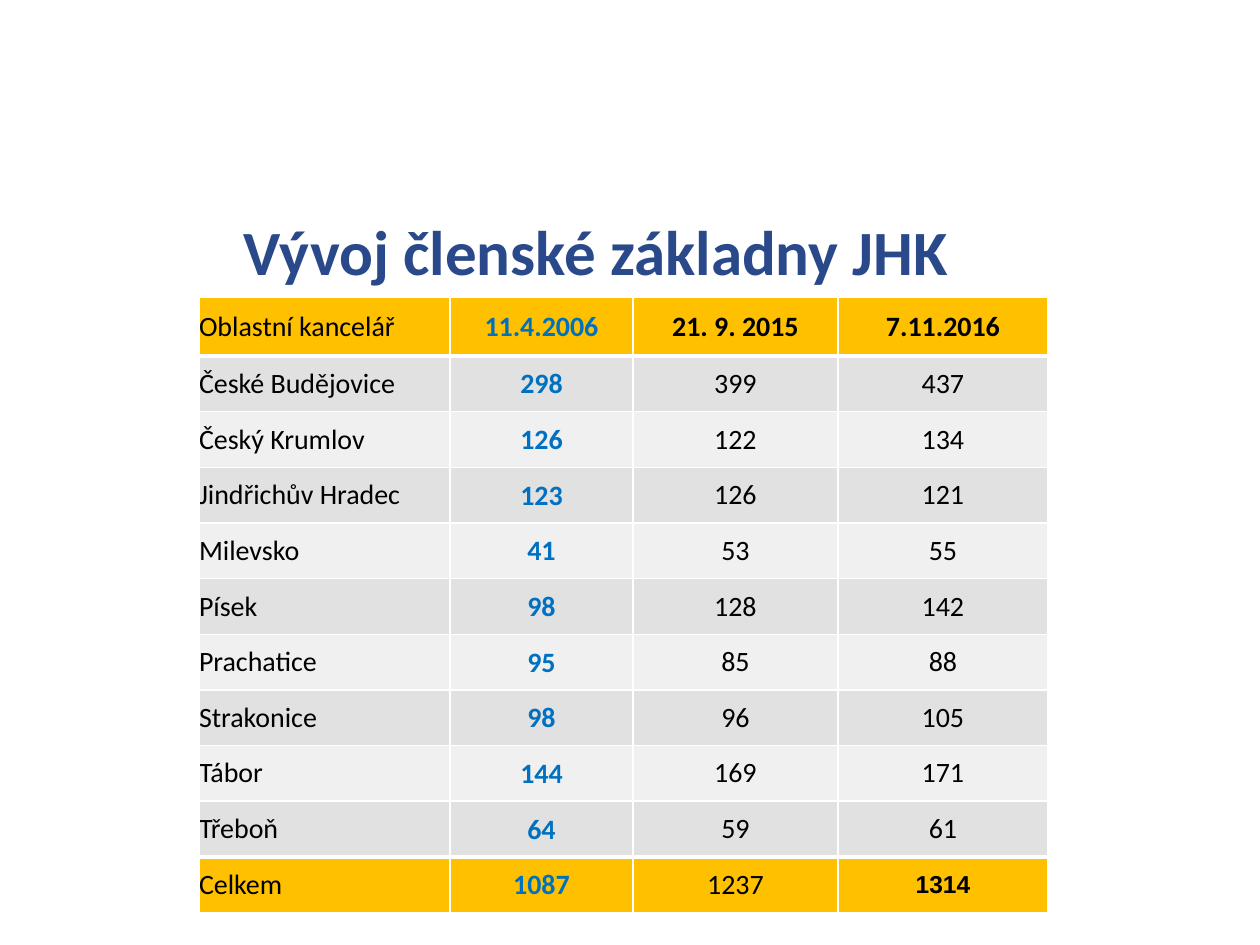
"""Build a slide with a table of chamber membership by regional office."""
from lxml import etree
from pptx import Presentation
from pptx import util as u
from pptx.dml.color import RGBColor
from pptx.enum import text
from pptx.oxml import ns

SCALE = 914400 / 126
NAVY = RGBColor(0x2A, 0x49, 0x8B)
BLUE = RGBColor(0x00, 0x70, 0xC0)
BLACK = RGBColor(0x00, 0x00, 0x00)
WHITE = RGBColor(0xFF, 0xFF, 0xFF)
GOLD = RGBColor(0xFF, 0xC0, 0x00)
BANDS = (RGBColor(0xF0, 0xF0, 0xF0), RGBColor(0xE1, 0xE1, 0xE1))

COLUMN_WIDTHS = (251, 183, 205, 210)
HEADER_HEIGHT, BODY_HEIGHT = 59, 557
MARGINS = ((0, 0, 0, 0), (1, 1, 1, 0), (9, 0, 9, 0), (9, 0, 9, 0))
MEMBERS = (
    ("Oblastní kancelář", "11.4.2006", "21. 9. 2015", "7.11.2016"),
    ("České Budějovice", "298", "399", "437"),
    ("Český Krumlov", "126", "122", "134"),
    ("Jindřichův Hradec", "123", "126", "121"),
    ("Milevsko", "41", "53", "55"),
    ("Písek", "98", "128", "142"),
    ("Prachatice", "95", "85", "88"),
    ("Strakonice", "98", "96", "105"),
    ("Tábor", "144", "169", "171"),
    ("Třeboň", "64", "59", "61"),
    ("Celkem", "1087", "1237", "1314"),
)
LAST_ROW, LAST_COL = len(MEMBERS) - 1, len(COLUMN_WIDTHS) - 1


def px(n):
    return u.Emu(round(n * SCALE))


def set_font(p, size, color, bold, name="Calibri"):
    p.font.name, p.font.size, p.font.bold = name, u.Pt(size), bold
    p.font.color.rgb = color


def set_borders(cell, top, bottom):
    tc_pr = cell._tc.get_or_add_tcPr()
    for side, width in (("L", 1), ("R", 1), ("T", top), ("B", bottom)):
        ln = etree.SubElement(tc_pr, ns.qn(f"a:ln{side}"), w=str(u.Pt(width)))
        fill = etree.SubElement(ln, ns.qn("a:solidFill"))
        etree.SubElement(fill, ns.qn("a:srgbClr"), val=str(WHITE))


def add_title(s, words, left, top, width, height):
    tf = s.shapes.add_textbox(px(left), px(top), px(width), px(height)).text_frame
    tf.word_wrap = True
    tf.vertical_anchor = text.MSO_ANCHOR.MIDDLE
    p = tf.paragraphs[0]
    p.text = words
    p.alignment = text.PP_ALIGN.CENTER
    p.line_spacing = 0.9
    set_font(p, 36, NAVY, True)


def fill_cell(cell, value, row, col):
    header, total = row == 0, row == LAST_ROW
    set_borders(cell, 3 if total else 1, 3 if header else 1)
    cell.fill.solid()
    cell.fill.fore_color.rgb = GOLD if header or total else BANDS[row % 2]
    cell.vertical_anchor = text.MSO_ANCHOR.MIDDLE
    cell.margin_left, cell.margin_top, cell.margin_right, cell.margin_bottom = map(px, MARGINS[col])
    p = cell.text_frame.paragraphs[0]
    p.text = value
    p.alignment = text.PP_ALIGN.CENTER if col else text.PP_ALIGN.LEFT
    if total and col == LAST_COL:
        set_font(p, 14, BLACK, True, "Arial")
    else:
        set_font(p, 16, BLUE if col == 1 else BLACK, col == 1 or (header and col > 0))


def add_member_table(s, left, top):
    frame = s.shapes.add_table(
        len(MEMBERS), len(COLUMN_WIDTHS), px(left), px(top),
        px(sum(COLUMN_WIDTHS)), px(HEADER_HEIGHT + BODY_HEIGHT))
    table = frame.table
    table.first_row = table.horz_banding = False
    for column, width in zip(table.columns, COLUMN_WIDTHS):
        column.width = px(width)
    for row, values in enumerate(MEMBERS):
        table.rows[row].height = px(BODY_HEIGHT / LAST_ROW if row else HEADER_HEIGHT)
        for col, value in enumerate(values):
            fill_cell(table.cell(row, col), value, row, col)


def main():
    prs = Presentation()
    prs.slide_width, prs.slide_height = px(1260), px(945)
    s = prs.slides.add_slide(prs.slide_layouts[6])
    add_title(s, "Vývoj členské základny JHK", 53, 215, 1086, 81)
    add_member_table(s, 199, 297)
    prs.save("out.pptx")


if __name__ == "__main__":
    main()
